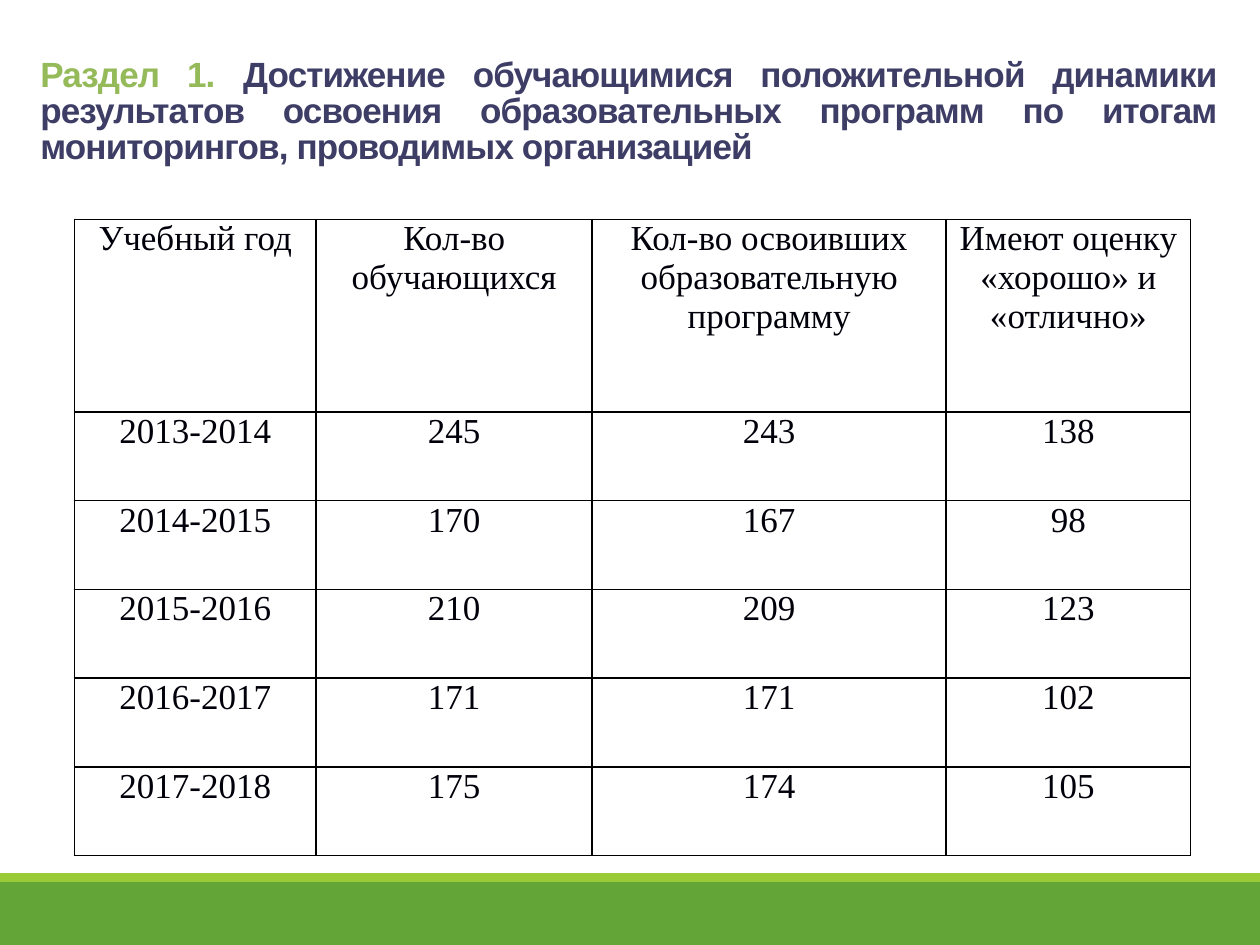
from lxml import etree
from pptx import Presentation
from pptx import util as u
from pptx.dml.color import RGBColor
from pptx.enum import shapes, text
from pptx.oxml import ns

GREEN = RGBColor(0x63, 0xA5, 0x37)
LIME = RGBColor(0x99, 0xCB, 0x38)
SECTION = RGBColor(0x95, 0xBA, 0x59)
HEADING = RGBColor(0x3D, 0x3D, 0x66)
INK = RGBColor(0x00, 0x00, 0x0A)
BLACK = RGBColor(0, 0, 0)

TITLE_RUNS = [
    ("Раздел 1. ", SECTION),
    ("Достижение обучающимися положительной динамики результатов освоения "
     "образовательных программ по итогам мониторингов, проводимых организацией", HEADING),
]
RESULTS = [
    ("Учебный год", "Кол-во обучающихся",
     "Кол-во освоивших образовательную программу", "Имеют оценку «хорошо» и «отлично»"),
    ("2013-2014", "245", "243", "138"),
    ("2014-2015", "170", "167", "98"),
    ("2015-2016", "210", "209", "123"),
    ("2016-2017", "171", "171", "102"),
    ("2017-2018", "175", "174", "105"),
]
COLUMN_WIDTHS = [1.92, 2.19, 2.81, 1.94]
TABLE_HEIGHT = 5.05
HEADER_HEIGHT = 1.53


def apply(target, values):
    for name, value in values.items():
        setattr(target, name, value)


def add_run(paragraph, wording, color, **font):
    run = paragraph.add_run()
    run.text = wording
    apply(run.font, font)
    run.font.color.rgb = color
    return run


def add_band(slide, top, height, color):
    band = slide.shapes.add_shape(
        shapes.MSO_SHAPE.RECTANGLE, 0, u.Inches(top), u.Inches(10), u.Inches(height))
    band.shadow.inherit = False
    band.fill.solid()
    band.fill.fore_color.rgb = color
    band.line.fill.background()


def fill_title(title):
    apply(title, {"left": u.Inches(0.22), "top": u.Inches(0.42),
                  "width": u.Inches(9.53), "height": u.Inches(1.08)})
    frame = title.text_frame
    apply(frame, {"word_wrap": True, "auto_size": text.MSO_AUTO_SIZE.NONE,
                  "vertical_anchor": text.MSO_ANCHOR.TOP})
    heading = frame.paragraphs[0]
    apply(heading, {"alignment": text.PP_ALIGN.JUSTIFY, "line_spacing": 0.85})
    for wording, color in TITLE_RUNS:
        run = add_run(heading, wording, color, name="Arial", size=u.Pt(20), bold=True)
        run.font._element.set("spc", "-50")


def add_borders(cell):
    properties = cell._tc.get_or_add_tcPr()
    for position, side in enumerate(("lnL", "lnR", "lnT", "lnB")):
        border = etree.Element(ns.qn(f"a:{side}"), w=str(u.Pt(1)))
        paint = etree.SubElement(border, ns.qn("a:solidFill"))
        etree.SubElement(paint, ns.qn("a:srgbClr"), val=str(BLACK))
        properties.insert(position, border)


def fill_cell(cell, wording):
    apply(cell, {"margin_left": u.Inches(0.07), "margin_right": u.Inches(0.07),
                 "margin_top": 0, "margin_bottom": 0,
                 "vertical_anchor": text.MSO_ANCHOR.TOP})
    cell.fill.background()
    add_borders(cell)
    paragraph = cell.text_frame.paragraphs[0]
    paragraph.alignment = text.PP_ALIGN.CENTER
    add_run(paragraph, wording, INK, name="Times New Roman", size=u.Pt(20), bold=False)


def add_results(slide):
    results = slide.shapes.add_table(
        len(RESULTS), len(COLUMN_WIDTHS), u.Inches(0.59), u.Inches(1.74),
        u.Inches(sum(COLUMN_WIDTHS)), u.Inches(TABLE_HEIGHT)).table
    apply(results, {"first_row": False, "horz_banding": False})
    for column, width in zip(results.columns, COLUMN_WIDTHS):
        column.width = u.Inches(width)
    year_height = (TABLE_HEIGHT - HEADER_HEIGHT) / (len(RESULTS) - 1)
    for index, (row, wordings) in enumerate(zip(results.rows, RESULTS)):
        row.height = u.Inches(year_height if index else HEADER_HEIGHT)
        for cell, wording in zip(row.cells, wordings):
            fill_cell(cell, wording)


def main():
    deck = Presentation()
    apply(deck, {"slide_width": u.Inches(10), "slide_height": u.Inches(7.5)})
    slide = deck.slides.add_slide(deck.slide_layouts[5])
    add_band(slide, 7, 0.5, GREEN)
    add_band(slide, 6.93, 0.07, LIME)
    fill_title(slide.shapes.title)
    add_results(slide)
    deck.save("out.pptx")


if __name__ == "__main__":
    main()
